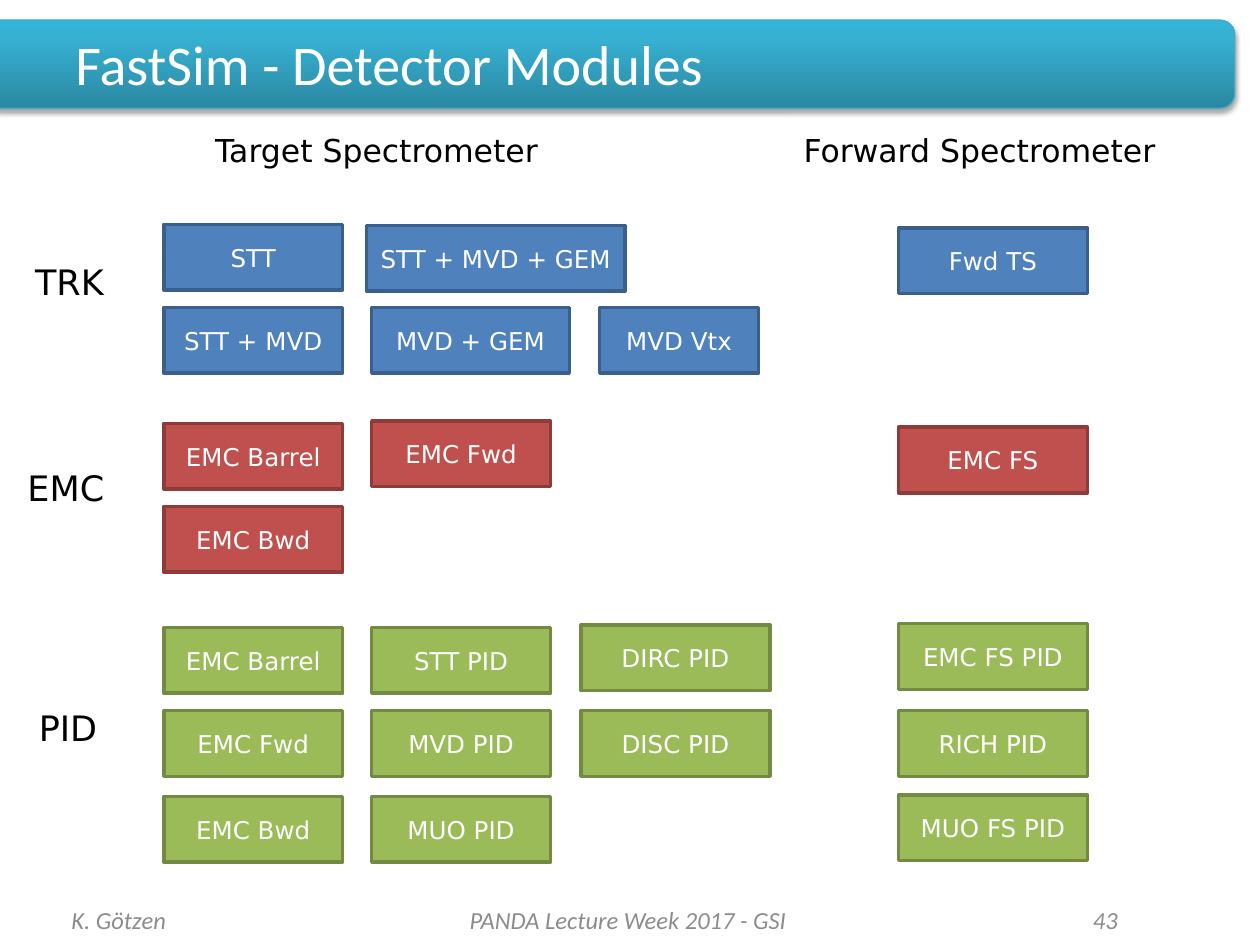
from lxml import etree
from pptx import Presentation
from pptx.dml.color import RGBColor
from pptx.enum import shapes, text
from pptx.oxml import ns
from pptx.util import Pt

SANS, CALIBRI = "DejaVu Sans", "Calibri"
LEFT, CENTER, RIGHT = text.PP_ALIGN.LEFT, text.PP_ALIGN.CENTER, text.PP_ALIGN.RIGHT
TOP, MIDDLE = text.MSO_ANCHOR.TOP, text.MSO_ANCHOR.MIDDLE
C1, C2, C3, C4 = 93.6, 212.4, 332, 513.4
W, WIDE, BOX_H = 102.2, 108, 37.6

REGIONS = [
    ("TRK", (0, 128.2, 720, 85), (13, 17.2, 55), "4F81BD", "3A5F8C", [
        ("STT", C1, 0, W),
        ("STT + MVD", C1, 47.5, W),
        ("STT + MVD + GEM", 209.5, 0.7, 147.6),
        ("MVD + GEM", C2, 47.5, 113),
        ("Fwd TS", C4, 2.1, WIDE),
        ("MVD Vtx", 342.7, 47.5, 90.7),
    ]),
    ("EMC", (0, 241.9, 720, 85), (8.6, 20.9, 58.3), "C0504D", "8E3B39", [
        ("EMC Barrel", C1, 0, W),
        ("EMC Fwd", C2, -1.4, W),
        ("EMC Bwd", C1, 47.5, W),
        ("EMC FS", C4, 2.2, WIDE),
    ]),
    ("PID", (0, 358.6, 720, 134), (15.1, 41.7, 50.4), "9BBB59", "738A42", [
        ("EMC Barrel", C1, 0, W),
        ("EMC Fwd", C1, 47.5, W),
        ("EMC Bwd", C1, 96.5, W),
        ("STT PID", C2, 0, W),
        ("MVD PID", C2, 47.5, W),
        ("MUO PID", C2, 96.5, W),
        ("DIRC PID", C3, -1.5, WIDE),
        ("DISC PID", C3, 47.5, WIDE),
        ("EMC FS PID", C4, -2.2, WIDE),
        ("RICH PID", C4, 47.5, WIDE),
        ("MUO FS PID", C4, 95.7, WIDE),
    ]),
]


def rgb(value):
    return RGBColor.from_string(value)


def assign(obj, values):
    for name, value in values.items():
        setattr(obj, name, value)


def add_node(parent, tag, **attrs):
    return etree.SubElement(parent, ns.qn(tag), attrs)


def write(sp, label, size, color, font=SANS, align=LEFT, anchor=MIDDLE,
          italic=False, wrap=True):
    tf = sp.text_frame
    assign(tf, {"word_wrap": wrap, "vertical_anchor": anchor})
    p = tf.paragraphs[0]
    p.alignment = align
    r = p.add_run()
    r.text = label
    assign(r.font, {"size": Pt(size), "name": font, "italic": italic})
    r.font.color.rgb = rgb(color)


def add_text(s, box, label, size, color, **style):
    sp = s.shapes.add_textbox(*map(Pt, box))
    write(sp, label, size, color, **style)


def add_box(s, kind, box, fill, line, width):
    sp = s.shapes.add_shape(kind, *map(Pt, box))
    sp.shadow.inherit = False
    sp.fill.solid()
    sp.fill.fore_color.rgb = rgb(fill)
    sp.line.color.rgb = rgb(line)
    sp.line.width = Pt(width)
    return sp


def add_title(s, box, label):
    x, y, w, h = box
    sp = add_box(s, shapes.MSO_SHAPE.ROUNDED_RECTANGLE, box, "34B4D6", "46AAC5", 0.75)
    sp.fill.gradient()
    sp.fill.gradient_angle = 90
    stops = sp._element.spPr.find(ns.qn("a:gradFill")).find(ns.qn("a:gsLst"))
    for stop in list(stops):
        stops.remove(stop)
    for pos, color in ((0, "2A88A2"), (80, "37B1D2"), (100, "34B4D6")):
        stop = add_node(stops, "a:gs", pos=str(pos * 1000))
        add_node(stop, "a:srgbClr", val=color)
    effects = sp._element.spPr.find(ns.qn("a:effectLst"))
    shadow = add_node(effects, "a:outerShdw", blurRad=str(Pt(3.1)), dist=str(Pt(1.8)),
                      dir="5400000", rotWithShape="0")
    color = add_node(shadow, "a:srgbClr", val="000000")
    add_node(color, "a:alpha", val="35000")
    add_text(s, (x + 44.6, y + 1.4, 648, 46.1), label, 32, "FFFFFF", font=CALIBRI)


def add_headings(s, box):
    x, y, w, h = box
    for label, dx, width in (("Target Spectrometer", 0, 202.3),
                             ("Forward Spectrometer", 336.2, 218.9)):
        add_text(s, (x + dx, y, width, h), label, 18, "000000", anchor=TOP, wrap=False)


def add_region(s, box, label, label_at, fill, line, modules):
    x, y, w, h = box
    dx, dy, width = label_at
    add_text(s, (x + dx, y + dy, width, 31.7), label, 20, "000000", anchor=TOP, wrap=False)
    for name, mx, my, mw in modules:
        sp = add_box(s, shapes.MSO_SHAPE.RECTANGLE, (x + mx, y + my, mw, BOX_H), fill, line, 2)
        write(sp, name, 14, "FFFFFF", align=CENTER)


def add_footer(s, box):
    x, y, w, h = box
    for label, dx, width, align in (("K. Götzen", 0, 167.8, LEFT),
                                    ("PANDA Lecture Week 2017 - GSI", 184.3, 281.5, CENTER),
                                    ("43", 506.2, 105.8, RIGHT)):
        add_text(s, (x + dx, y, width, h), label, 14, "8C8C8C", font=CALIBRI,
                 align=align, italic=True)


def main():
    prs = Presentation()
    assign(prs, {"slide_width": Pt(720), "slide_height": Pt(540)})
    s = prs.slides.add_slide(prs.slide_layouts[6])
    add_title(s, (-8.6, 11.5, 714.2, 50.4), "FastSim - Detector Modules")
    add_footer(s, (33.8, 511.2, 612, 28.8))
    add_headings(s, (115.9, 71.3, 555.1, 28.8))
    for label, box, label_at, fill, line, modules in REGIONS:
        add_region(s, box, label, label_at, fill, line, modules)
    prs.save("out.pptx")


if __name__ == "__main__":
    main()
